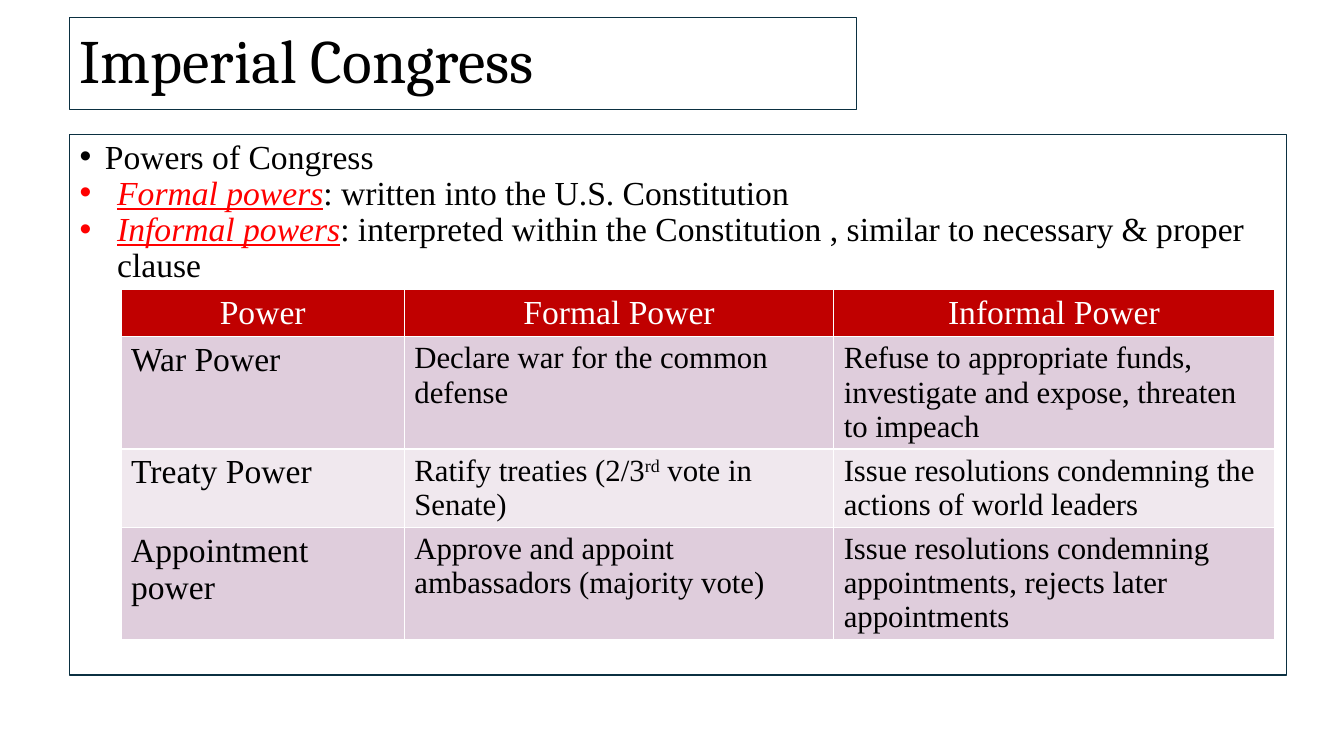
from lxml import etree
from pptx import Presentation
from pptx.dml.color import RGBColor
from pptx.enum.text import MSO_ANCHOR, MSO_AUTO_SIZE, PP_ALIGN
from pptx.oxml.ns import qn
from pptx.util import Cm, Pt

LEFT, CENTER = PP_ALIGN.LEFT, PP_ALIGN.CENTER
TOP, MIDDLE = MSO_ANCHOR.TOP, MSO_ANCHOR.MIDDLE
NO_FIT = MSO_AUTO_SIZE.NONE

SERIF = "Times New Roman"
BLACK, WHITE, RED = "000000", "FFFFFF", "FF0000"
NAVY, CRIMSON, MAUVE, PALE = "0B3041", "C00000", "DFCDDC", "F0E8EE"

POINTS = [
    ("", "Powers of Congress", 0.64),
    ("Formal powers", ": written into the U.S. Constitution", 0.95),
    ("Informal powers", ": interpreted within the Constitution , "
     "similar to necessary & proper clause", 0.95),
]
WIDTHS = [7.14, 10.82, 11.1]
ROWS = [
    ["Power", "Formal Power", "Informal Power"],
    ["War Power", "Declare war for the common defense",
     "Refuse to appropriate funds, investigate and expose, threaten to impeach"],
    ["Treaty Power", ("Ratify treaties (2/3", "rd", " vote in Senate)"),
     "Issue resolutions condemning the actions of world leaders"],
    ["Appointment power", "Approve and appoint ambassadors (majority vote)",
     "Issue resolutions condemning appointments, rejects later appointments"],
]


def rgb(code):
    return RGBColor.from_string(code)


def paint(item, code):
    item.fill.solid()
    item.fill.fore_color.rgb = rgb(code)


def style(run, size, color=BLACK, face=SERIF):
    font = run.font
    font.name, font.size, font.bold = face, Pt(size), False
    font.color.rgb = rgb(color)


def add_run(para, text, size, color=BLACK):
    run = para.add_run()
    run.text = text
    style(run, size, color)
    return run


def frame_box(box, left, top, width, height, anchor):
    box.left, box.top = Cm(left), Cm(top)
    box.width, box.height = Cm(width), Cm(height)
    paint(box, WHITE)
    box.line.color.rgb = rgb(NAVY)
    box.line.width = Pt(0.75)
    frame = box.text_frame
    frame.word_wrap = True
    frame.auto_size = NO_FIT
    frame.vertical_anchor = anchor
    return frame


def set_para(para):
    para.alignment = LEFT
    para.line_spacing = 0.9
    para.space_before = Pt(0)


def set_bullet(para, indent):
    props = para._p.get_or_add_pPr()
    props.set("marL", str(Cm(indent)))
    props.set("indent", str(-Cm(indent)))
    etree.SubElement(props, qn("a:buFont")).set("typeface", "Arial")
    etree.SubElement(props, qn("a:buChar")).set("char", "•")


def add_title(slide):
    frame = frame_box(slide.shapes.title, 1.75, 0.43, 19.84, 2.34, MIDDLE)
    frame.text = "Imperial Congress"
    para = frame.paragraphs[0]
    set_para(para)
    style(para.runs[0], 44, face="Cambria")


def add_points(slide):
    frame = frame_box(slide.placeholders[1], 1.75, 3.4, 30.68, 13.61, TOP)
    for i, (term, text, indent) in enumerate(POINTS):
        para = frame.add_paragraph() if i else frame.paragraphs[0]
        set_para(para)
        set_bullet(para, indent)
        if term:
            run = add_run(para, term, 24, RED)
            run.font.italic = run.font.underline = True
        add_run(para, text, 24)


def fill_cell(cell, text, row, col):
    paint(cell, MAUVE if row % 2 else PALE if row else CRIMSON)
    para = cell.text_frame.paragraphs[0]
    para.alignment = LEFT if row else CENTER
    size = 22 if row and col else 24
    parts = [text] if isinstance(text, str) else text
    for i, part in enumerate(parts):
        run = add_run(para, part, size, BLACK if row else WHITE)
        if i == 1:
            run._r.get_or_add_rPr().set("baseline", "30000")


def add_powers(slide):
    frame = slide.shapes.add_table(len(ROWS), len(WIDTHS), Cm(3.05), Cm(7.29),
                                   Cm(sum(WIDTHS)), Cm(9.47))
    table = frame.table
    for col, width in zip(table.columns, WIDTHS):
        col.width = Cm(width)
    for r, texts in enumerate(ROWS):
        table.rows[r].height = Cm(1.04)
        for c, text in enumerate(texts):
            fill_cell(table.cell(r, c), text, r, c)
    frame.height = Cm(9.47)


def main():
    deck = Presentation()
    deck.slide_width, deck.slide_height = Cm(33.87), Cm(19.05)
    slide = deck.slides.add_slide(deck.slide_layouts[1])
    add_title(slide)
    add_points(slide)
    add_powers(slide)
    deck.save("out.pptx")


if __name__ == "__main__":
    main()
